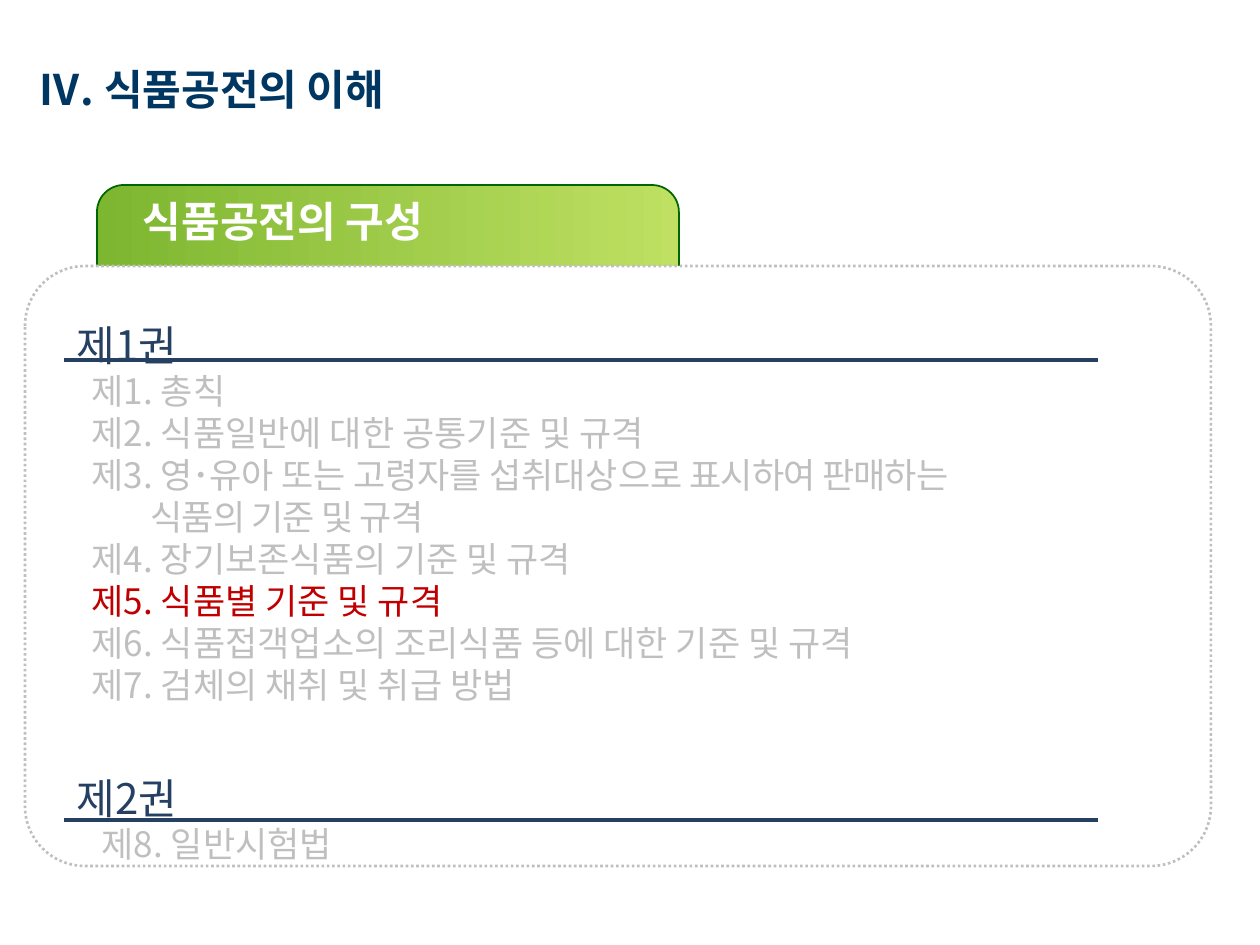
from dataclasses import dataclass
from lxml.etree import SubElement
from pptx import Presentation
from pptx.dml.color import RGBColor
from pptx.enum.dml import MSO_LINE
from pptx.enum.shapes import MSO_CONNECTOR, MSO_SHAPE
from pptx.enum.text import MSO_ANCHOR, PP_ALIGN
from pptx.oxml.ns import qn
from pptx.util import Pt


@dataclass(frozen=True)
class Theme:
    font: str = "Noto Sans CJK KR"
    title: str = "003762"
    head: str = "254061"
    item: str = "BFBFBF"
    mark: str = "C00000"
    white: str = "FFFFFF"
    edge: str = "006600"
    dark: str = "7DB630"
    light: str = "BFE062"
    big: int = 24
    small: int = 20


T = Theme()


def px(n):
    return round(n * 914400 / 126)


def rgb(code):
    return RGBColor.from_string(code)


def set_frame(frame, left, top):
    frame.word_wrap = True
    frame.vertical_anchor = MSO_ANCHOR.TOP
    frame.margin_left, frame.margin_top = px(left), px(top)
    frame.margin_right = frame.margin_bottom = px(6)


def add_run(para, text, size, color, bold=False, gap=0):
    run = para.add_run()
    run.text = text
    font = run.font
    font.name, font.size, font.bold = T.font, Pt(size), bold
    font.color.rgb = rgb(color)
    props = run._r.get_or_add_rPr()
    SubElement(props, qn("a:ea")).set("typeface", T.font)
    if gap:
        props.set("spc", str(gap))


def set_para(para, pitch, indent=0, before=0):
    para.alignment = PP_ALIGN.LEFT
    para.line_spacing = Pt(pitch)
    para.space_before = Pt(before)
    para._p.get_or_add_pPr().set("marL", str(px(indent)))


def add_title(slide, text):
    box = slide.shapes.add_textbox(px(26), px(55), px(653), px(69))
    set_frame(box.text_frame, 13, 6)
    para = box.text_frame.paragraphs[0]
    set_para(para, 30)
    add_run(para, text, T.big, T.title, True)


def add_round(slide, left, top, width, height, bend):
    shape = slide.shapes.add_shape(
        MSO_SHAPE.ROUNDED_RECTANGLE, px(left), px(top), px(width), px(height))
    shape.adjustments[0] = bend
    shape.shadow.inherit = False
    return shape


def add_tab(slide, text):
    tab = add_round(slide, 97, 185, 582, 159, 0.17)
    tab.fill.gradient()
    tab.fill.gradient_angle = 0
    for stop, color, place in zip(tab.fill.gradient_stops, (T.dark, T.light), (0, 1)):
        stop.color.rgb = rgb(color)
        stop.position = place
    tab.line.color.rgb = rgb(T.edge)
    tab.line.width = Pt(1)
    set_frame(tab.text_frame, 38, 1)
    para = tab.text_frame.paragraphs[0]
    set_para(para, 30)
    add_run(para, text, T.big, T.white, True)


def add_panel(slide):
    panel = add_round(slide, 25, 266, 1186, 600, 0.1)
    panel.fill.solid()
    panel.fill.fore_color.rgb = rgb(T.white)
    panel.line.color.rgb = rgb(T.item)
    panel.line.width = Pt(1.5)
    panel.line.dash_style = MSO_LINE.ROUND_DOT
    set_frame(panel.text_frame, 12, 23)
    return panel.text_frame


def add_head(para, text, before=0):
    set_para(para, 36, 22, before)
    add_run(para, text, T.big, T.head)


def add_item(frame, runs, indent=37, color=T.item):
    para = frame.add_paragraph()
    set_para(para, 24, indent)
    for text, gap in runs:
        add_run(para, text, T.small, color, gap=gap)


def add_rule(slide, y):
    rule = slide.shapes.add_connector(
        MSO_CONNECTOR.STRAIGHT, px(64), px(y), px(1098), px(y))
    rule.line.color.rgb = rgb(T.head)
    rule.line.width = Pt(2)
    SubElement(rule._element.spPr, qn("a:effectLst"))


def main():
    deck = Presentation()
    deck.slide_width, deck.slide_height = px(1260), px(945)
    slide = deck.slides.add_slide(deck.slide_layouts[6])
    add_tab(slide, "식품공전의 구성")
    frame = add_panel(slide)
    add_head(frame.paragraphs[0], "제1권")
    add_item(frame, [("제1. 총칙", 0)])
    add_item(frame, [("제2. 식품일반에 대한 공통기준 및 규격", 0)])
    add_item(frame, [("제3. 영･유아 또는 고령자를 섭취대상으로 ", -10),
                     ("표시하여 판매하는", -50)])
    add_item(frame, [("식품의 기준 및 규격", -50)], 96)
    add_item(frame, [("제4. 장기보존식품의 기준 및 규격", 0)])
    add_item(frame, [("제5. 식품별 기준 및 규격", 0)], color=T.mark)
    add_item(frame, [("제6. 식품접객업소의 조리식품 등에 대한 기준 및 규격", 0)])
    add_item(frame, [("제7. 검체의 채취 및 취급 방법", 0)])
    add_head(frame.add_paragraph(), "제2권", 31)
    add_item(frame, [("제8. 일반시험법", 0)], 47)
    for y in (360, 820):
        add_rule(slide, y)
    add_title(slide, "Ⅳ. 식품공전의 이해")
    deck.save("out.pptx")


if __name__ == "__main__":
    main()
